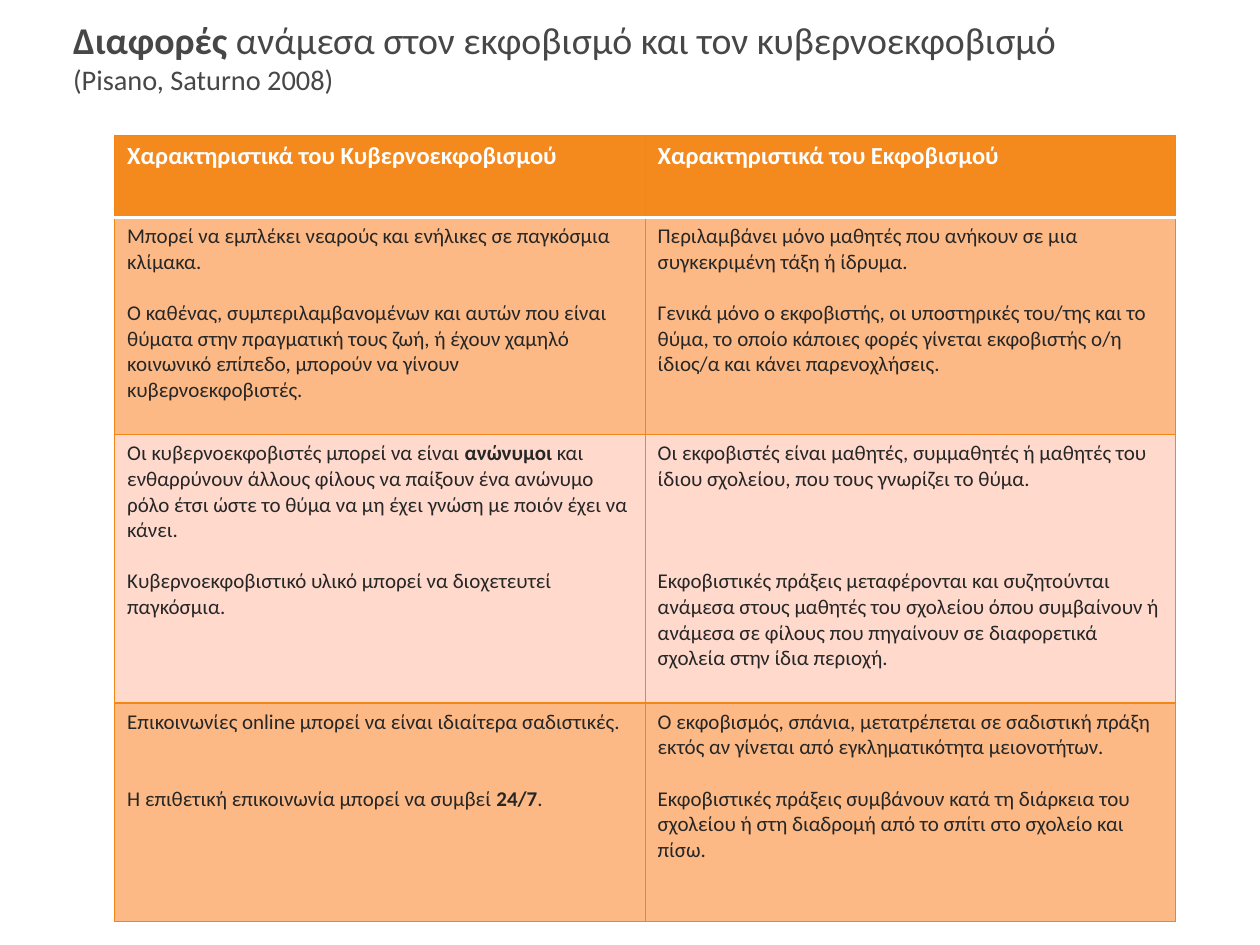
"""Build a slide with a table that compares cyberbullying with bullying."""
from dataclasses import dataclass

from lxml.etree import SubElement as Sub
from pptx import Presentation
from pptx.dml.color import RGBColor as Rgb
from pptx.enum.text import MSO_ANCHOR as Anchor, MSO_AUTO_SIZE as Fit, PP_ALIGN as Align
from pptx.oxml.ns import qn
from pptx.util import Inches, Pt


@dataclass(frozen=True)
class Theme:
    font: str = "Calibri"
    title: str = "474747"
    ink: str = "262626"
    white: str = "FFFFFF"
    head: str = "F4891E"
    edge: str = "F48618"
    dark: str = "FCB985"
    light: str = "FFD9CC"
    big: float = 21.6
    small: float = 16.2
    label: float = 14
    body: float = 12
    gap: float = 14.65


look = Theme()


def add_run(para, text, size, color, bold=False):
    run = para.add_run()
    run.text = text
    run.font.name = look.font
    run.font.size = Pt(size)
    run.font.bold = bold
    run.font.color.rgb = Rgb.from_string(color)


def add_edge(cell, side, color, width):
    line = Sub(cell._tc.get_or_add_tcPr(), qn(f"a:ln{side}"), w=str(Pt(width)))
    fill = Sub(line, qn("a:solidFill"))
    Sub(fill, qn("a:srgbClr"), val=color)


deck = Presentation()
deck.slide_width, deck.slide_height = Inches(10), Inches(7.5)
wide, high = deck.slide_width, deck.slide_height
slide = deck.slides.add_slide(deck.slide_layouts[5])

title = slide.shapes.title
title.left, title.top = int(wide * 0.048), int(high * 0.01)
title.width, title.height = int(wide * 0.92), int(high * 0.1)
frame = title.text_frame
frame.word_wrap = True
frame.auto_size = Fit.NONE
frame.vertical_anchor = Anchor.MIDDLE
para = frame.paragraphs[0]
para.alignment = Align.LEFT
add_run(para, "Διαφορές ", look.big, look.title, True)
add_run(para, "ανάμεσα στον εκφοβισμό και τον κυβερνοεκφοβισμό", look.big, look.title)
para.add_line_break()
add_run(para, "(Pisano, Saturno 2008)", look.small, look.title)

# Each cell lists its paragraphs as (blank lines before, runs).
rows = [
    [
        [(0, ["Χαρακτηριστικά του Κυβερνοεκφοβισμού"])],
        [(0, ["Χαρακτηριστικά του Εκφοβισμού"])],
    ],
    [
        [
            (0, ["Μπορεί να εμπλέκει νεαρούς και ενήλικες σε παγκόσμια κλίμακα."]),
            (1, ["Ο καθένας, συμπεριλαμβανομένων και αυτών που είναι θύματα στην "
                 "πραγματική τους ζωή, ή έχουν χαμηλό κοινωνικό επίπεδο, μπορούν "
                 "να γίνουν κυβερνοεκφοβιστές."]),
        ],
        [
            (0, ["Περιλαμβάνει μόνο μαθητές που ανήκουν σε μια συγκεκριμένη τάξη ή ίδρυμα."]),
            (1, ["Γενικά μόνο ο εκφοβιστής, οι υποστηρικές του/της και το θύμα, "
                 "το οποίο κάποιες φορές γίνεται εκφοβιστής ο/η ίδιος/α και κάνει "
                 "παρενοχλήσεις."]),
        ],
    ],
    [
        [
            (0, ["Οι κυβερνοεκφοβιστές μπορεί να είναι ", "ανώνυμοι ",
                 "και ενθαρρύνουν άλλους φίλους να παίξουν ένα ανώνυμο ρόλο έτσι "
                 "ώστε το θύμα να μη έχει γνώση με ποιόν έχει να κάνει."]),
            (1, ["Κυβερνοεκφοβιστικό υλικό μπορεί να διοχετευτεί παγκόσμια."]),
        ],
        [
            (0, ["Οι εκφοβιστές είναι μαθητές, συμμαθητές ή μαθητές του ίδιου "
                 "σχολείου, που τους γνωρίζει το θύμα."]),
            (3, ["Εκφοβιστικές πράξεις μεταφέρονται και συζητούνται ανάμεσα στους "
                 "μαθητές του σχολείου όπου συμβαίνουν ή ανάμεσα σε φίλους που "
                 "πηγαίνουν σε διαφορετικά σχολεία στην ίδια περιοχή."]),
        ],
    ],
    [
        [
            (0, ["Επικοινωνίες οnline μπορεί να είναι ιδιαίτερα σαδιστικές."]),
            (2, ["Η επιθετική επικοινωνία μπορεί να συμβεί ", "24/7", "."]),
        ],
        [
            (0, ["Ο εκφοβισμός, σπάνια, μετατρέπεται σε σαδιστική πράξη εκτός αν "
                 "γίνεται από εγκληματικότητα μειονοτήτων."]),
            (1, ["Εκφοβιστικές πράξεις συμβάνουν κατά τη διάρκεια του σχολείου ή "
                 "στη διαδρομή από το σπίτι στο σχολείο και πίσω."]),
        ],
    ],
]
shares = [0.087, 0.23, 0.284, 0.231]
fills = [look.head, look.dark, look.light, look.dark]

grid = slide.shapes.add_table(
    len(rows), 2, int(wide * 0.091), int(high * 0.143),
    int(wide * 0.842), int(high * sum(shares)),
).table
for y, (row, share, fill) in enumerate(zip(rows, shares, fills)):
    grid.rows[y].height = int(high * share)
    for x, paras in enumerate(row):
        cell = grid.cell(y, x)
        for side in "LRTB":
            rule = (y, side) in [(0, "B"), (1, "T")]
            add_edge(cell, side, look.white if rule else look.edge, 2 if rule else 0.75)
        cell.fill.solid()
        cell.fill.fore_color.rgb = Rgb.from_string(fill)
        size, ink = (look.body, look.ink) if y else (look.label, look.white)
        for n, (blanks, runs) in enumerate(paras):
            para = cell.text_frame.add_paragraph() if n else cell.text_frame.paragraphs[0]
            if blanks:
                para.space_before = Pt(blanks * look.gap)
            for k, text in enumerate(runs):
                add_run(para, text, size, ink, y == 0 or k == 1)

deck.save("out.pptx")
